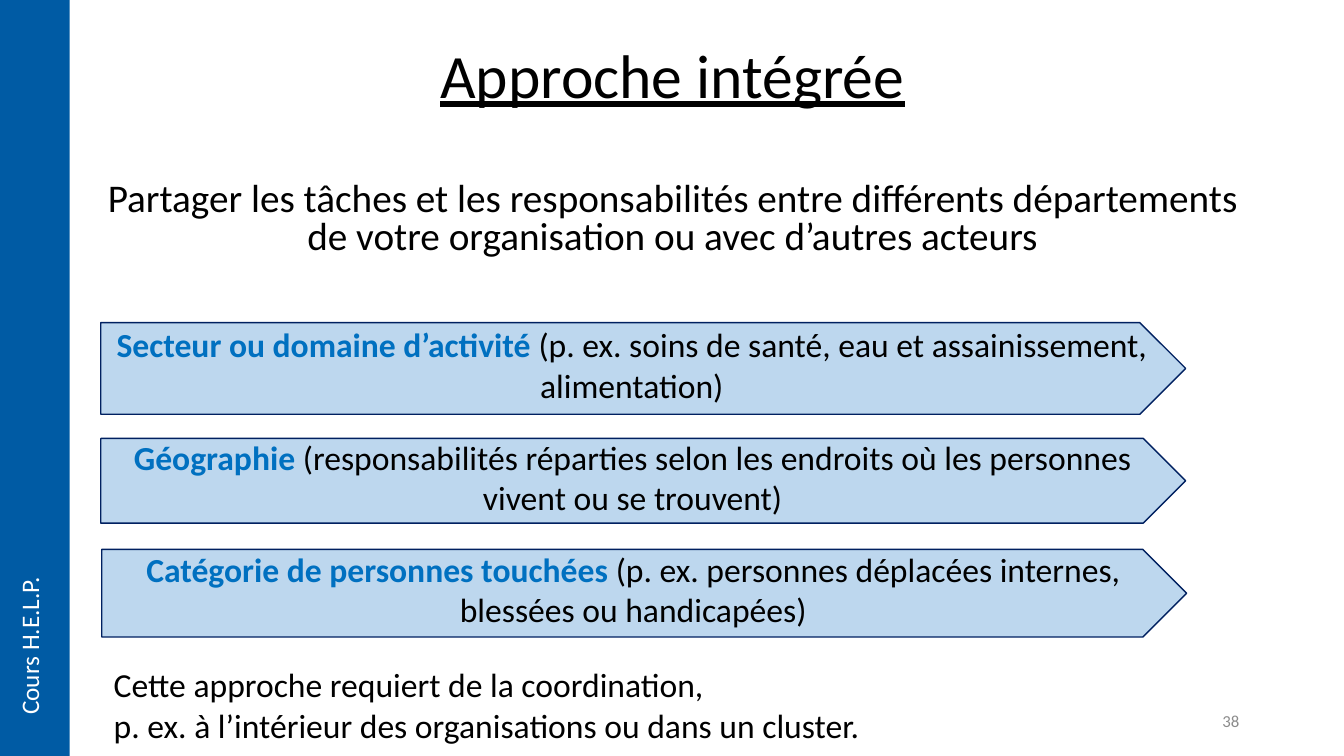
from dataclasses import dataclass

from pptx import Presentation
from pptx.dml.color import RGBColor
from pptx.enum.shapes import MSO_SHAPE
from pptx.enum.text import MSO_ANCHOR, PP_ALIGN
from pptx.shapes.autoshape import Shape
from pptx.slide import Slide
from pptx.text.text import TextFrame, _Paragraph
from pptx.util import Inches, Pt

BLACK = RGBColor(0x00, 0x00, 0x00)
WHITE = RGBColor(0xFF, 0xFF, 0xFF)
GREY = RGBColor(0x8C, 0x8C, 0x8C)
BAND_BLUE = RGBColor(0x00, 0x5B, 0xA4)
TERM_BLUE = RGBColor(0x00, 0x70, 0xC0)
ARROW_BLUE = RGBColor(0xBD, 0xD7, 0xEE)
NAVY = RGBColor(0x00, 0x20, 0x60)
FONT = "Calibri"

PENTAGON, RECTANGLE = MSO_SHAPE.PENTAGON, MSO_SHAPE.RECTANGLE
TOP, MIDDLE = MSO_ANCHOR.TOP, MSO_ANCHOR.MIDDLE
LEFT, CENTER, RIGHT = PP_ALIGN.LEFT, PP_ALIGN.CENTER, PP_ALIGN.RIGHT


@dataclass
class Arrow:
    left: float
    top: float
    height: float
    term: str
    detail: str


ARROWS = [
    Arrow(1, 3.2, 0.91, "Secteur ou domaine d’activité",
          " (p. ex. soins de santé, eau et assainissement, alimentation)"),
    Arrow(1, 4.35, 0.84, "Géographie",
          " (responsabilités réparties selon les endroits où les personnes vivent ou se trouvent)"),
    Arrow(1.01, 5.45, 0.87, "Catégorie de personnes touchées",
          " (p. ex. personnes déplacées internes, blessées ou handicapées)"),
]
ARROW_WIDTH = 10.76


def add_run(p: _Paragraph, text: str, *, size: float = 24, color: RGBColor = BLACK,
            bold: bool = False, underline: bool = False) -> None:
    r = p.add_run()
    r.text = text
    r.font.name = FONT
    r.font.size = Pt(size)
    r.font.color.rgb = color
    r.font.bold = bold
    r.font.underline = underline


def add_text(slide: Slide, box: tuple[float, float, float, float], *lines: str,
             align: PP_ALIGN = LEFT, anchor: MSO_ANCHOR = TOP, wrap: bool = True,
             spacing: float = 1.0, **fmt) -> TextFrame:
    tf = slide.shapes.add_textbox(*map(Inches, box)).text_frame
    tf.word_wrap = wrap
    tf.vertical_anchor = anchor
    for i, line in enumerate(lines):
        p = tf.add_paragraph() if i else tf.paragraphs[0]
        p.alignment = align
        p.line_spacing = spacing
        add_run(p, line, **fmt)
    return tf


def add_block(slide: Slide, kind: MSO_SHAPE, box: tuple[float, float, float, float],
              fill: RGBColor) -> Shape:
    sp = slide.shapes.add_shape(kind, *map(Inches, box))
    sp.shadow.inherit = False
    sp.fill.solid()
    sp.fill.fore_color.rgb = fill
    sp.line.fill.background()
    return sp


def add_arrow(slide: Slide, arrow: Arrow) -> None:
    box = (arrow.left, arrow.top, ARROW_WIDTH, arrow.height)
    sp = add_block(slide, PENTAGON, box, ARROW_BLUE)
    sp.line.color.rgb = NAVY
    sp.line.width = Pt(1)
    tf = sp.text_frame
    tf.word_wrap = True
    tf.vertical_anchor = MIDDLE
    tf.margin_top = 0
    tf.margin_bottom = Inches(0.08)
    p = tf.paragraphs[0]
    p.alignment = CENTER
    add_run(p, arrow.term, color=TERM_BLUE, bold=True)
    add_run(p, arrow.detail)


def main() -> None:
    prs = Presentation()
    prs.slide_width, prs.slide_height = Inches(13.33), Inches(7.5)
    slide = prs.slides.add_slide(prs.slide_layouts[6])

    add_text(slide, (0.92, 0.05, 11.5, 1.45), "Approche intégrée",
             align=CENTER, anchor=MIDDLE, spacing=0.9, size=44, underline=True)
    add_text(slide, (0.92, 1.76, 11.5, 0.89),
             "Partager les tâches et les responsabilités entre différents départements "
             "de votre organisation ou avec d’autres acteurs",
             align=CENTER, spacing=0.8, size=28)
    for arrow in ARROWS:
        add_arrow(slide, arrow)
    add_text(slide, (1.03, 6.54, 7.74, 0.91),
             "Cette approche requiert de la coordination,",
             "p. ex. à l’intérieur des organisations ou dans un cluster.", wrap=False)

    add_block(slide, RECTANGLE, (0, 0, 0.69, 7.5), BAND_BLUE)
    tf = add_text(slide, (0.09, 5.61, 0.5, 1.58), "Cours H.E.L.P.",
                  wrap=False, size=18, color=WHITE)
    tf._txBody.bodyPr.set("vert", "vert270")
    add_text(slide, (9.39, 6.95, 3, 0.4), "38",
             align=RIGHT, anchor=MIDDLE, size=12, color=GREY)

    prs.save("out.pptx")


if __name__ == "__main__":
    main()
